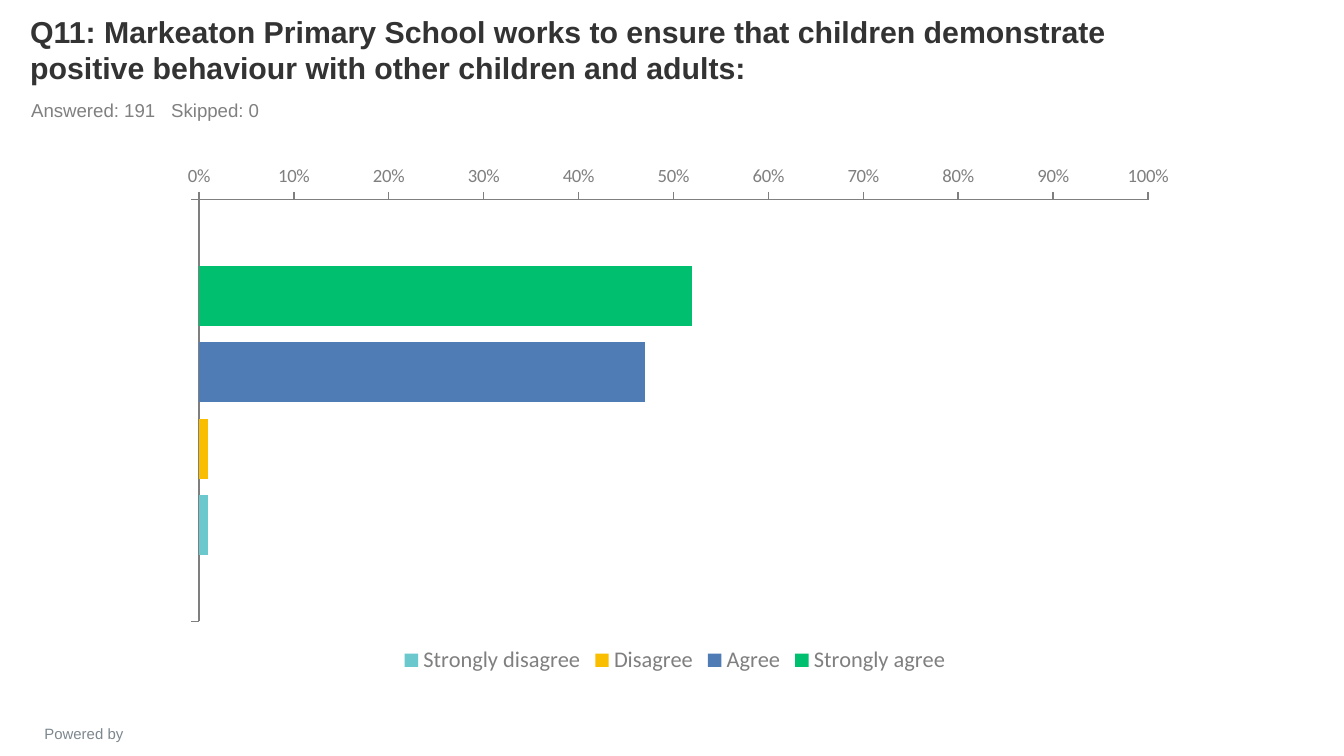
from lxml.etree import SubElement
from pptx import Presentation
from pptx.chart.data import CategoryChartData
from pptx.dml.color import RGBColor
from pptx.enum.chart import (
    XL_CHART_TYPE as ChartType,
    XL_LEGEND_POSITION as LegendPosition,
    XL_TICK_LABEL_POSITION as LabelPosition,
    XL_TICK_MARK as TickMark,
)
from pptx.enum.text import MSO_ANCHOR as Anchor, PP_ALIGN as Align
from pptx.oxml.ns import qn
from pptx.util import Emu, Pt

TITLE = ("Q11: Markeaton Primary School works to ensure that children "
         "demonstrate positive behaviour with other children and adults:")
ANSWERED = 191
SKIPPED = 0
RESPONSES = [
    ("Strongly agree", 0.52, "00BF6F"),
    ("Agree", 0.47, "507CB6"),
    ("Disagree", 0.01, "F9BE00"),
    ("Strongly disagree", 0.01, "6BC8CD"),
]
INK, GREY, AXIS_GREY, FOOTER_GREY = "333333", "808080", "7F7F7F", "7C878E"


def px(count):
    return Emu(round(count * 914400 / 134.4))


def colour(value):
    return RGBColor.from_string(value)


def style_font(font, name, size, value, bold=False):
    font.name = name
    font.size = Pt(size)
    font.bold = bold
    font.color.rgb = colour(value)


def add_text(page, frame, text, size, value, bold=False,
             align=Align.LEFT, anchor=Anchor.TOP, tab=None):
    box = page.shapes.add_textbox(*map(px, frame))
    box.text_frame.word_wrap = True
    box.text_frame.vertical_anchor = anchor
    para = box.text_frame.paragraphs[0]
    para.alignment = align
    if tab:
        stops = SubElement(para._p.get_or_add_pPr(), qn("a:tabLst"))
        SubElement(stops, qn("a:tab"), pos=str(px(tab)), algn="l")
    span = para.add_run()
    span.text = text
    style_font(span.font, "Arial", size, value, bold)


def style_axis(axis):
    axis.has_major_gridlines = False
    axis.major_tick_mark = TickMark.OUTSIDE
    axis.minor_tick_mark = TickMark.NONE
    axis.format.line.color.rgb = colour(AXIS_GREY)
    axis.format.line.width = Pt(0.75)
    style_font(axis.tick_labels.font, "Calibri", 10, AXIS_GREY)


def add_response_chart(page, frame):
    data = CategoryChartData(number_format="0%")
    data.categories = [" "]
    for name, portion, _ in RESPONSES:
        data.add_series(name, [portion])
    chart = page.shapes.add_chart(
        ChartType.BAR_CLUSTERED, *map(px, frame), data).chart
    chart.has_title = False
    style_font(chart.font, "Calibri", 18, INK)

    plot = chart.plots[0]
    plot.gap_width = 219
    plot.overlap = -27
    plot.vary_by_categories = False
    for series, (_, _, value) in zip(plot.series, RESPONSES):
        series.invert_if_negative = False
        series.format.fill.solid()
        series.format.fill.fore_color.rgb = colour(value)

    answers, share = chart.category_axis, chart.value_axis
    for axis in (answers, share):
        style_axis(axis)
    answers.reverse_order = True
    answers.crosses_at = 2
    answers.tick_label_position = LabelPosition.LOW
    share.minimum_scale = 0
    share.maximum_scale = 1
    share.major_unit = 0.1
    share.tick_labels.number_format = "0%"
    share.tick_labels.number_format_is_linked = False

    chart.has_legend = True
    chart.legend.position = LegendPosition.BOTTOM
    chart.legend.include_in_layout = False
    style_font(chart.legend.font, "Calibri", 12, AXIS_GREY)


def main():
    deck = Presentation()
    deck.slide_width, deck.slide_height = px(1344), px(756)
    page = deck.slides.add_slide(deck.slide_layouts[6])
    add_text(page, (7, 718, 154, 24), "Powered by", 8, FOOTER_GREY,
             align=Align.CENTER)
    add_text(page, (17, 12, 1210, 80), TITLE, 16.2, INK, bold=True,
             anchor=Anchor.BOTTOM)
    add_text(page, (18, 92, 1210, 35),
             f"Answered: {ANSWERED}\tSkipped: {SKIPPED}", 10, GREY, tab=140)
    add_response_chart(page, (161, 155, 1028, 524))
    deck.save("out.pptx")


if __name__ == "__main__":
    main()
